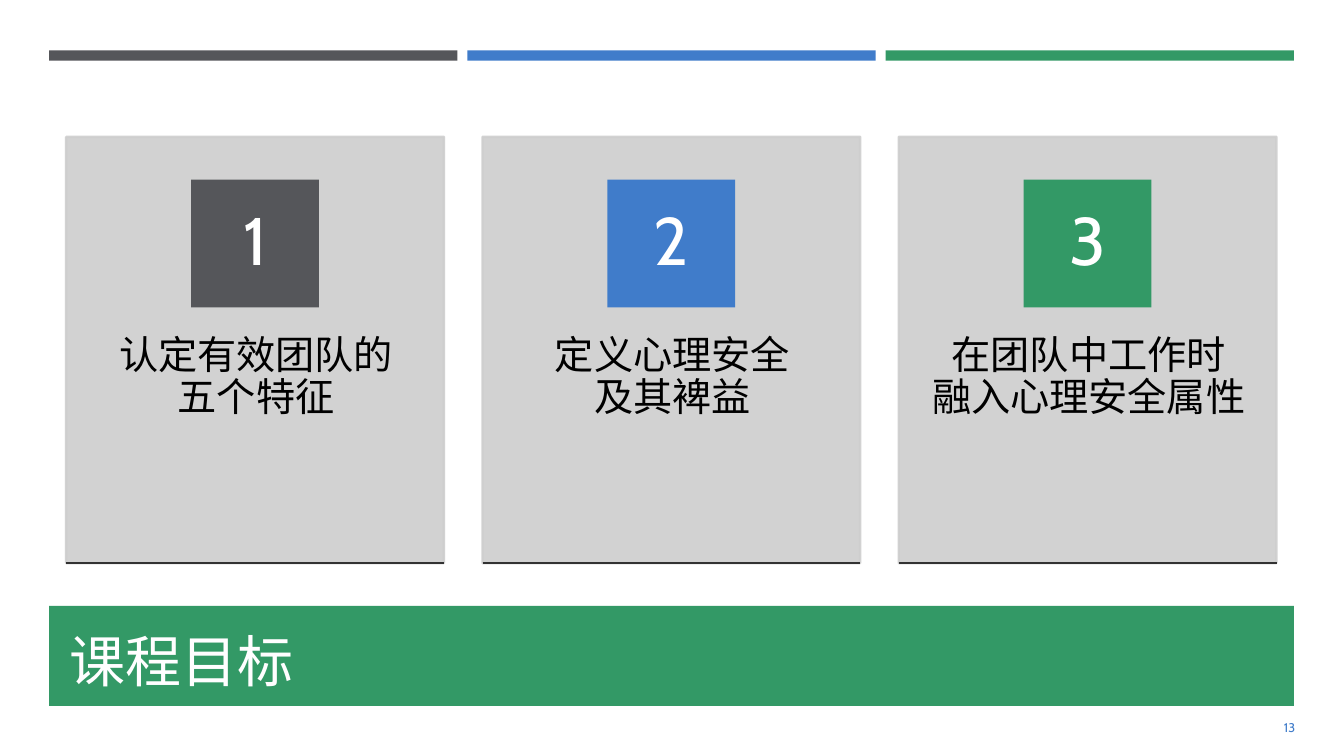
from dataclasses import dataclass

from lxml import etree
from pptx import Presentation
from pptx.dml.color import RGBColor
from pptx.enum.shapes import MSO_CONNECTOR, MSO_SHAPE
from pptx.enum.text import MSO_ANCHOR, PP_ALIGN
from pptx.oxml.ns import qn
from pptx.util import Cm, Pt

RECTANGLE = MSO_SHAPE.RECTANGLE
STRAIGHT = MSO_CONNECTOR.STRAIGHT
TOP, MIDDLE = MSO_ANCHOR.TOP, MSO_ANCHOR.MIDDLE
LEFT, CENTER, RIGHT = PP_ALIGN.LEFT, PP_ALIGN.CENTER, PP_ALIGN.RIGHT

GREY, BLUE, GREEN = "55565A", "407CCA", "339966"
CARD_GREY, BASELINE_GREY = "CECECE", "323232"
BLACK, WHITE, TITLE_WHITE = "000000", "FFFFFF", "FFFEFF"
BODY_FONT, TITLE_FONT = "Cabin", "TeX Gyre Schola"

# Column grid, in centimetres
BAR_LEFT, BAR_WIDTH, BAR_PITCH = 1.24, 10.29, 10.54
CARD_LEFT, CARD_WIDTH, CARD_PITCH = 1.67, 9.52, 10.49
CARD_TOP, CARD_HEIGHT = 3.45, 10.74
BADGE_SIZE = 3.22


@dataclass(frozen=True)
class Box:
    left: float
    top: float
    width: float
    height: float

    def lengths(self) -> list:
        return [Cm(v) for v in (self.left, self.top, self.width, self.height)]


@dataclass(frozen=True)
class TextStyle:
    size: float
    color: str
    font: str = BODY_FONT
    align: PP_ALIGN = CENTER
    anchor: MSO_ANCHOR = MIDDLE
    spacing: float = 1.0
    insets: tuple = (0.25, 0.13, 0.25, 0.13)


@dataclass(frozen=True)
class Goal:
    number: str
    wording: str
    color: str


TITLE_STYLE = TextStyle(40, TITLE_WHITE, font=TITLE_FONT, align=LEFT)
PAGE_STYLE = TextStyle(9, BLUE, align=RIGHT)
BADGE_STYLE = TextStyle(48, WHITE, spacing=0.9, insets=(0.25, 0.03, 0.25, 0.03))
GOAL_STYLE = TextStyle(28, BLACK, anchor=TOP, spacing=0.9,
                       insets=(0.79, 0.91, 0.74, 0.91))

GOALS = [
    Goal("1", "认定有效团队的\v五个特征", GREY),
    Goal("2", "定义心理安全\v及其裨益", BLUE),
    Goal("3", "在团队中工作时\v融入心理安全属性", GREEN),
]


def rgb(color: str) -> RGBColor:
    return RGBColor.from_string(color)


def set_opacity(part, percent: int) -> None:
    """Make every solid colour of a shape partly transparent."""
    for color in part._element.spPr.iter(qn("a:srgbClr")):
        etree.SubElement(color, qn("a:alpha"), val=str(percent * 1000))


def add_block(slide, box: Box, color: str):
    block = slide.shapes.add_shape(RECTANGLE, *box.lengths())
    block.shadow.inherit = False
    block.fill.solid()
    block.fill.fore_color.rgb = rgb(color)
    block.line.fill.background()
    return block


def write(holder, text: str, style: TextStyle) -> None:
    frame = holder.text_frame
    frame.word_wrap = True
    frame.vertical_anchor = style.anchor
    (frame.margin_left, frame.margin_top,
     frame.margin_right, frame.margin_bottom) = map(Cm, style.insets)
    frame.text = text
    paragraph = frame.paragraphs[0]
    paragraph.alignment = style.align
    paragraph.line_spacing = style.spacing
    for run in paragraph.runs:
        run.font.size = Pt(style.size)
        run.font.name = style.font
        run.font.color.rgb = rgb(style.color)


def add_text(slide, box: Box, text: str, style: TextStyle) -> None:
    write(slide.shapes.add_textbox(*box.lengths()), text, style)


def add_baseline(slide, left: float, top: float, width: float) -> None:
    baseline = slide.shapes.add_connector(
        STRAIGHT, Cm(left), Cm(top), Cm(left + width), Cm(top))
    baseline.line.color.rgb = rgb(BASELINE_GREY)
    baseline.line.width = Pt(1.75)
    etree.SubElement(baseline._element.spPr, qn("a:effectLst"))


def add_goal(slide, goal: Goal, left: float) -> None:
    card = add_block(slide, Box(left, CARD_TOP, CARD_WIDTH, CARD_HEIGHT), CARD_GREY)
    card.line.color.rgb = rgb(CARD_GREY)
    card.line.width = Pt(1.75)
    set_opacity(card, 90)

    add_text(slide, Box(left, 7.54, CARD_WIDTH, 6.45), goal.wording, GOAL_STYLE)

    badge_left = left + (CARD_WIDTH - BADGE_SIZE) / 2
    badge = add_block(slide, Box(badge_left, 4.53, BADGE_SIZE, BADGE_SIZE), goal.color)
    write(badge, goal.number, BADGE_STYLE)

    add_baseline(slide, left, CARD_TOP + CARD_HEIGHT, CARD_WIDTH)


def main() -> None:
    deck = Presentation()
    deck.slide_width, deck.slide_height = Cm(33.87), Cm(19.05)
    slide = deck.slides.add_slide(deck.slide_layouts[6])

    # Coloured bars along the top
    for column, goal in enumerate(GOALS):
        add_block(slide, Box(BAR_LEFT + column * BAR_PITCH, 1.27, BAR_WIDTH, 0.26),
                  goal.color)

    # Title banner and page number
    add_block(slide, Box(BAR_LEFT, 15.27, 31.37, 2.52), GREEN)
    add_text(slide, Box(1.5, 15.52, 30.63, 2.21), "课程目标", TITLE_STYLE)
    add_text(slide, Box(29.97, 17.83, 2.92, 1.02), "13", PAGE_STYLE)

    # Goal cards
    for column, goal in enumerate(GOALS):
        add_goal(slide, goal, CARD_LEFT + column * CARD_PITCH)

    deck.save("out.pptx")


if __name__ == "__main__":
    main()
